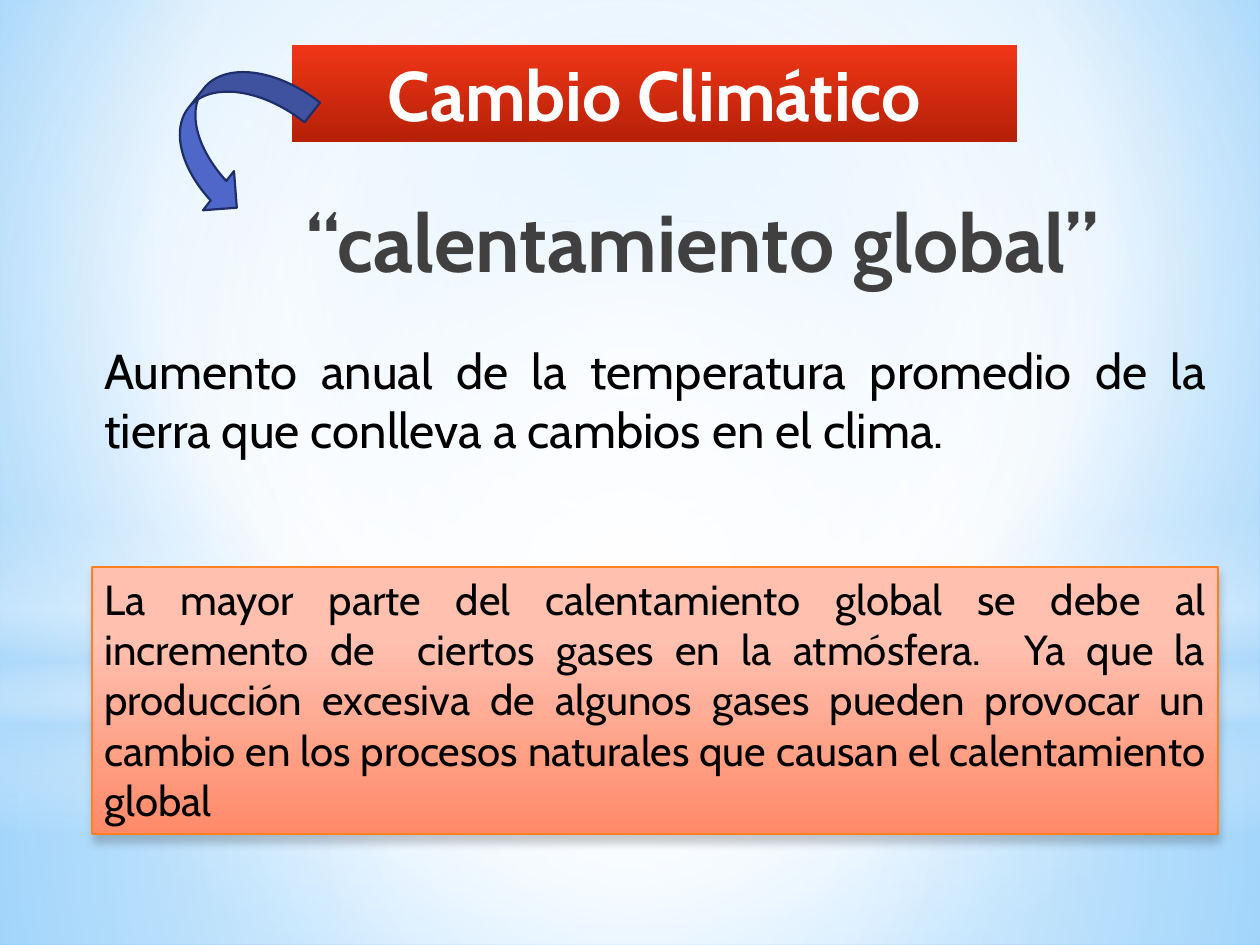
import lxml.etree
import pptx
import pptx.dml.color
import pptx.enum.shapes
import pptx.enum.text
import pptx.oxml.ns
import pptx.util

SCALE = 914400 / 126
COLORS = {
    "white": "FFFFFF", "black": "000000", "gray": "404040",
    "sky": "9ED5FF", "deep sky": "5BB9FF", "pale sky": "B4DCFA",
    "red": "F03617", "dark red": "B52007",
    "peach": "FFC0AF", "salmon": "FF8968", "orange": "FF8021",
    "blue": "4E67C8", "navy": "1F2E69",
}
RECTANGLE = pptx.enum.shapes.MSO_SHAPE.RECTANGLE
OVAL = pptx.enum.shapes.MSO_SHAPE.OVAL
ALIGN = pptx.enum.text.PP_ALIGN
qn = pptx.oxml.ns.qn


def set_gradient(fill, properties, stops, center=None):
    """Fill with (percent, color, opacity) stops: circular around center, else top to bottom."""
    fill.gradient()
    gradient = properties.find(qn("a:gradFill"))
    for child in list(gradient):
        gradient.remove(child)
    stop_list = lxml.etree.SubElement(gradient, qn("a:gsLst"))
    for percent, color, opacity in stops:
        stop = lxml.etree.SubElement(stop_list, qn("a:gs"), pos=str(percent * 1000))
        rgb = lxml.etree.SubElement(stop, qn("a:srgbClr"), val=COLORS[color])
        if opacity < 100:
            lxml.etree.SubElement(rgb, qn("a:alpha"), val=str(opacity * 1000))
    if center:
        circle = lxml.etree.SubElement(gradient, qn("a:path"), path="circle")
        sides = {side: str(value * 1000) for side, value in zip("ltrb", center)}
        lxml.etree.SubElement(circle, qn("a:fillToRect"), **sides)
    else:
        lxml.etree.SubElement(gradient, qn("a:lin"), ang="5400000", scaled="0")


def write_text(shape, text, size, color, alignment, bold=False):
    frame = shape.text_frame
    frame.word_wrap = True
    frame.vertical_anchor = pptx.enum.text.MSO_ANCHOR.TOP
    paragraph = frame.paragraphs[0]
    paragraph.text = text
    paragraph.alignment = alignment
    paragraph.font.name = "Cabin"
    paragraph.font.size = pptx.util.Pt(size)
    paragraph.font.bold = bold
    paragraph.font.color.rgb = pptx.dml.color.RGBColor.from_string(COLORS[color])


presentation = pptx.Presentation()
presentation.slide_width = round(1260 * SCALE)
presentation.slide_height = round(945 * SCALE)
slide = presentation.slides.add_slide(presentation.slide_layouts[6])

# Sky background with translucent layers of light
background_fill = slide.background.fill
background_fill.solid()
set_gradient(background_fill, slide.element.find(".//" + qn("p:bgPr")),
             [(0, "sky", 100), (60, "white", 100), (100, "deep sky", 100)], (20, 10, 20, 60))

middle = (50, 50, 50, 50)
layers = [
    (RECTANGLE, 703, 242, middle,
     [(0, "white", 91), (37, "white", 76), (100, "pale sky", 79)]),
    (RECTANGLE, 0, 703, middle,
     [(0, "white", 89), (48, "white", 62), (100, "pale sky", 79)]),
    (RECTANGLE, 519, 315, None,
     [(0, "white", 0), (29, "white", 30), (45, "pale sky", 40),
      (55, "white", 26), (65, "pale sky", 60), (100, "white", 0)]),
    (OVAL, 221, 703, middle, [(0, "white", 100), (56, "white", 0)]),
]
for kind, top, height, center, stops in layers:
    layer = slide.shapes.add_shape(
        kind, 0, round(top * SCALE), round(1260 * SCALE), round(height * SCALE))
    layer.shadow.inherit = False
    layer.line.fill.background()
    set_gradient(layer.fill, layer.element.spPr, stops, center)

# Heading banner
banner = slide.shapes.add_shape(RECTANGLE, *[round(v * SCALE) for v in (292, 45, 725, 97)])
banner.shadow.inherit = False
banner.line.fill.background()
set_gradient(banner.fill, banner.element.spPr, [(0, "red", 100), (100, "dark red", 100)])
write_text(banner, "Cambio Climático", 40, "white", ALIGN.CENTER, bold=True)

# Title
title = slide.shapes.add_textbox(*[round(v * SCALE) for v in (144, 186, 966, 158)])
write_text(title, "“calentamiento global”", 46, "gray", ALIGN.RIGHT, bold=True)

# Curved arrow from the banner to the title
arrow = slide.shapes.add_shape(pptx.enum.shapes.MSO_SHAPE.CURVED_UP_ARROW,
                               *[round(v * SCALE) for v in (152, 84, 159, 100)])
arrow.rotation = 128.4
arrow.shadow.inherit = False
arrow.fill.solid()
arrow.fill.fore_color.rgb = pptx.dml.color.RGBColor.from_string(COLORS["blue"])
arrow.line.color.rgb = pptx.dml.color.RGBColor.from_string(COLORS["navy"])
arrow.line.width = pptx.util.Pt(1.25)

# Definition
definition = slide.shapes.add_textbox(*[round(v * SCALE) for v in (92, 334, 1126, 131)])
write_text(definition,
           "Aumento anual de la temperatura promedio de la tierra que conlleva "
           "a cambios en el clima.", 28, "black", ALIGN.JUSTIFY)

# Explanation box with a soft shadow below
explanation = slide.shapes.add_shape(RECTANGLE, *[round(v * SCALE) for v in (92, 567, 1126, 267)])
explanation.line.color.rgb = pptx.dml.color.RGBColor.from_string(COLORS["orange"])
explanation.line.width = pptx.util.Pt(0.75)
set_gradient(explanation.fill, explanation.element.spPr,
             [(28, "peach", 100), (100, "salmon", 100)])
explanation.shadow.inherit = False
shadow = lxml.etree.SubElement(
    explanation.element.spPr.find(qn("a:effectLst")), qn("a:outerShdw"),
    blurRad=str(pptx.util.Pt(5)), dist=str(pptx.util.Pt(4)), dir="5400000", rotWithShape="0")
shadow_color = lxml.etree.SubElement(shadow, qn("a:srgbClr"), val=COLORS["black"])
lxml.etree.SubElement(shadow_color, qn("a:alpha"), val="20000")
write_text(explanation,
           "La mayor parte del calentamiento global se debe al incremento de  ciertos gases "
           "en la atmósfera.  Ya que la producción excesiva de algunos gases pueden provocar "
           "un cambio en los procesos naturales que causan el calentamiento global",
           24, "black", ALIGN.JUSTIFY)

presentation.save("out.pptx")
